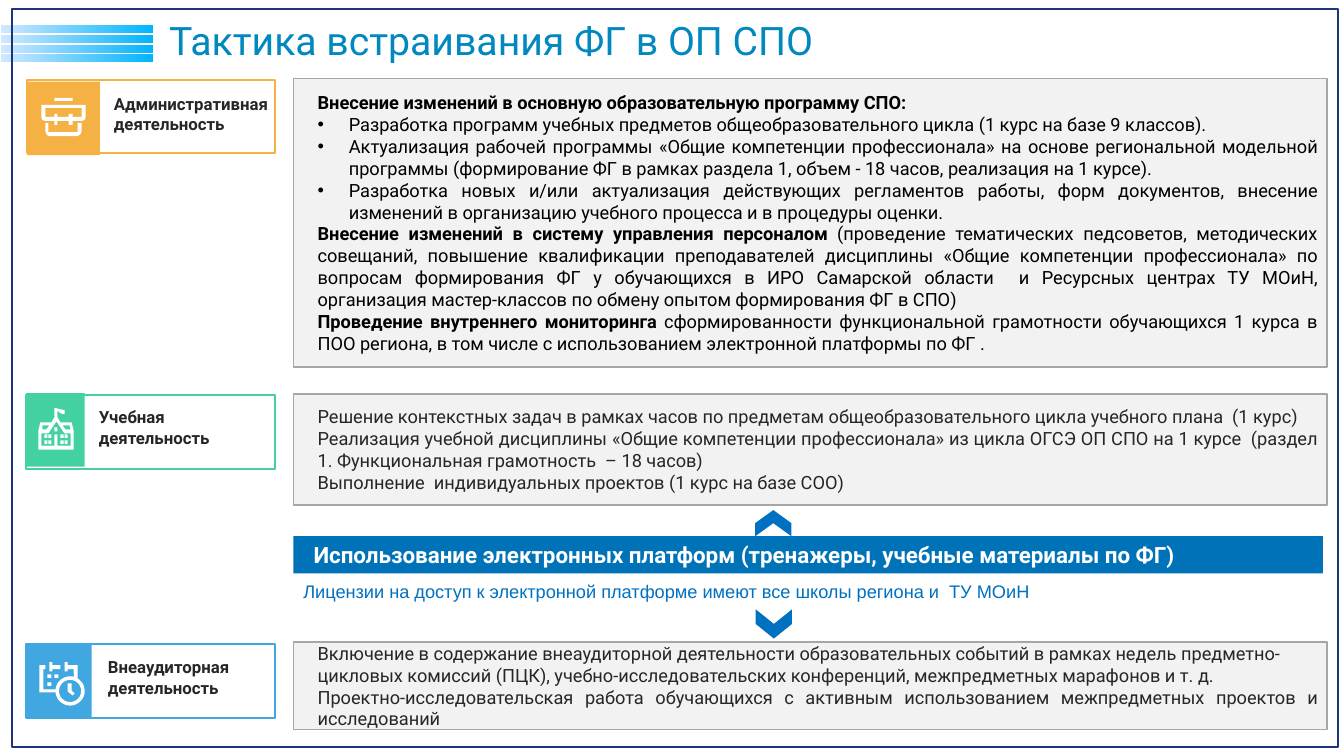
from dataclasses import dataclass
from math import cos, radians, sin

from lxml.etree import SubElement
from pptx import Presentation
from pptx.dml.color import RGBColor as Rgb
from pptx.enum.shapes import MSO_SHAPE as Kind
from pptx.enum.text import MSO_ANCHOR as Anchor, PP_ALIGN as Align
from pptx.oxml.ns import qn
from pptx.util import Inches, Pt


@dataclass(frozen=True)
class Theme:
    font: str = "Roboto"
    plain: str = "Arial"
    white: str = "FFFFFF"
    black: str = "000000"
    dark: str = "262626"
    pale: str = "F2F2F2"
    edge: str = "A6A6A6"
    navy: str = "1E357C"
    head: str = "0088BF"
    bar: str = "0073B8"
    arrow: str = "0070C0"
    fade: tuple = ("D1E8FF", "00B5FF")
    gold: str = "F5B144"
    green: str = "43D1A1"
    sky: str = "40A7E1"
    title: int = 28
    strong: int = 16
    body: int = 13
    label: int = 12


T = Theme()
WIDE, HIGH = Inches(13.33), Inches(7.5)
COL, ROW = WIDE / 133.3, HIGH / 75
LEFT, SPAN = 29.1, 102.5
INSET = (2.4, 0.5, 1, 0.5)
SNUG = (0.8, 0.8, 0.8, 0.8)
BASE = (1, 0.5, 1, 0.5)


def place(x, y, w, h):
    return round(x * COL), round(y * ROW), round(w * COL), round(h * ROW)


def box(slide, spot, fill=None, line=None, width=1, kind=Kind.RECTANGLE):
    shape = slide.shapes.add_shape(kind, *place(*spot))
    shape.shadow.inherit = False
    if fill:
        shape.fill.solid()
        shape.fill.fore_color.rgb = Rgb.from_string(fill)
    else:
        shape.fill.background()
    if line:
        shape.line.color.rgb = Rgb.from_string(line)
        shape.line.width = Pt(width)
    else:
        shape.line.fill.background()
    return shape


def style(run, size, color, bold=False, face=T.font):
    run.font.size = Pt(size)
    run.font.name = face
    run.font.bold = bold
    run.font.color.rgb = Rgb.from_string(color)


def frame(shape, inset, anchor=Anchor.TOP):
    text = shape.text_frame
    text.word_wrap = True
    text.vertical_anchor = anchor
    text.margin_left, text.margin_top, text.margin_right, text.margin_bottom = (
        round(n * COL) for n in inset)
    return text


def write(shape, words, size, color, bold=False, face=T.font, inset=BASE):
    text = frame(shape, inset)
    text.text = words
    for para in text.paragraphs:
        para.alignment = Align.LEFT
        for run in para.runs:
            style(run, size, color, bold, face)
    return text


def note(slide, spot, words, size, color, **look):
    return write(slide.shapes.add_textbox(*place(*spot)), words, size, color, **look)


def bullet(para):
    props = para._p.get_or_add_pPr()
    gap = round(3.1 * COL)
    props.set("marL", str(gap))
    props.set("indent", str(-gap))
    SubElement(props, qn("a:buFont")).set("typeface", T.plain)
    SubElement(props, qn("a:buChar")).set("char", "•")


def panel(slide, y, h, color, paras):
    text = frame(box(slide, (LEFT, y, SPAN, h), T.pale, T.edge), INSET, Anchor.MIDDLE)
    for i, (lead, rest, mark, align) in enumerate(paras):
        para = text.add_paragraph() if i else text.paragraphs[0]
        para.alignment = align
        if mark:
            bullet(para)
        for words, bold in ((lead, True), (rest, False)):
            if words:
                run = para.add_run()
                run.text = words
                style(run, T.body, color, bold)


def item(rest="", lead="", mark=False, align=Align.JUSTIFY):
    return lead, rest, mark, align


def rect(x, y, w, h):
    return [(x, y), (x + w, y), (x + w, y + h), (x, y + h)]


def arc(r, start, end, steps=24):
    turns = (radians(start + (end - start) * i / steps) for i in range(steps + 1))
    return [(30.5 + r * cos(a), 28.5 + r * sin(a)) for a in turns]


def case():
    return [
        rect(13, 0, 18, 3),
        [(0, 7), (0, 19), (1, 22), (4, 23), (13, 23), (13, 27), (16, 27), (16, 23), (27, 23),
         (27, 27), (31, 27), (31, 23), (40, 23), (43, 22), (44, 19), (44, 7)],
        [(31, 19), (31, 16), (27, 16), (27, 19), (16, 19), (16, 16), (13, 16), (13, 19),
         (4, 19), (4, 10), (40, 10), (40, 19)],
        [(36, 34), (7, 34), (7, 25), (4, 25), (4, 33), (5, 36), (7, 38), (36, 38), (39, 36),
         (40, 33), (40, 25), (36, 25)],
    ]


def school():
    return [rect(x, y, 3, 3.5) for x in (6, 10, 22, 26) for y in (26, 32)] + [
        rect(16, 19, 3, 4),
        [(32, 37), (19, 37), (19, 26), (16, 26), (16, 37), (3, 37), (3, 25), (10, 25),
         (18, 13), (26, 25), (32, 25)],
        [(4, 17), (11, 17), (8, 21), (4, 21)],
        [(31, 17), (32, 21), (27, 21), (24, 17)],
        [(33, 14), (22, 14), (19, 9), (19, 3), (20, 3), (22, 5), (26, 6), (26, 2), (22, 1),
         (18, 0), (16, 0), (16, 9), (13, 14), (2, 14), (0, 22), (0, 41), (35, 41), (35, 22)],
    ]


def dates():
    return [rect(x, y, 4, 3.5) for x, y in ((15, 12), (8, 12), (8, 20))] + [
        [(13, 7), (21, 7), (21, 3), (13, 3), (13, 0), (10, 0), (10, 9), (13, 9)],
        [(32, 21), (28, 21), (28, 29), (33, 33), (35, 31), (32, 28)],
        arc(11, 0, 360),
        [(38, 3), (28, 3), (28, 0), (25, 0), (25, 9), (28, 9), (28, 7), (34, 7)]
        + arc(14.5, -75, -174)
        + [(4, 27), (4, 7), (6, 7), (6, 3), (0, 3), (0, 30)]
        + arc(14.5, 174, -59),
    ]


def icon(slide, x, y, loops):
    dots = [[(round((x + a / 10) * COL), round((y + b / 10) * ROW)) for a, b in loop]
            for loop in loops]
    pen = slide.shapes.build_freeform(*dots[0][0])
    for i, loop in enumerate(dots):
        if i:
            pen.move_to(*loop[0])
        pen.add_line_segments(loop[1:], close=True)
    shape = pen.convert_to_shape()
    shape.shadow.inherit = False
    shape.fill.solid()
    shape.fill.fore_color.rgb = Rgb.from_string(T.white)
    shape.line.fill.background()


def card(slide, color, rim, chip, label, words, spot, loops):
    box(slide, rim, T.white, color, 1.5)
    box(slide, chip, color)
    note(slide, label, words, T.label, T.dark, bold=True, inset=SNUG)
    icon(slide, *spot, loops)


def stripe(slide, y):
    fill = box(slide, (0.1, y, 15.1, 0.8), T.white).fill
    fill.gradient()
    fill.gradient_angle = 0
    for stop, color, spot in zip(fill.gradient_stops, T.fade, (0, 1)):
        stop.color.rgb = Rgb.from_string(color)
        stop.position = spot


def main():
    deck = Presentation()
    deck.slide_width, deck.slide_height = WIDE, HIGH
    slide = deck.slides.add_slide(deck.slide_layouts[6])
    for i in range(4):
        stripe(slide, 2.5 + 0.96 * i)
    box(slide, (1.2, 0.9, 131.5, 73.2), line=T.navy)
    head = note(slide, (15.8, 1.7, 117, 5.4), "Тактика встраивания ФГ в ОП СПО", T.title, T.head)
    head.paragraphs[0].line_spacing = 0.9

    panel(slide, 7.8, 28.6, T.black, [
        item(lead="Внесение изменений в основную образовательную программу СПО:"),
        item("Разработка программ учебных предметов общеобразовательного цикла (1 курс на базе 9 классов).", mark=True),
        item("Актуализация рабочей программы «Общие компетенции профессионала» на основе региональной модельной программы (формирование ФГ в рамках раздела 1, объем - 18 часов, реализация на 1 курсе).", mark=True),
        item("Разработка новых и/или актуализация действующих регламентов работы, форм документов, внесение изменений в организацию учебного процесса и в процедуры оценки.", mark=True),
        item("(проведение тематических педсоветов, методических совещаний, повышение квалификации преподавателей дисциплины «Общие компетенции профессионала» по вопросам формирования ФГ у обучающихся в ИРО Самарской области  и Ресурсных центрах ТУ МОиН, организация мастер-классов по обмену опытом формирования ФГ в СПО)",
             "Внесение изменений в систему управления персоналом "),
        item("сформированности функциональной грамотности обучающихся 1 курса в ПОО региона, в том числе с использованием электронной платформы по ФГ .",
             "Проведение внутреннего мониторинга "),
    ])
    panel(slide, 39.1, 11, T.dark, [
        item("Решение контекстных задач в рамках часов по предметам общеобразовательного цикла учебного плана  (1 курс)"),
        item("Реализация учебной дисциплины «Общие компетенции профессионала» из цикла ОГСЭ ОП СПО на 1 курсе  (раздел 1. Функциональная грамотность  – 18 часов)"),
        item("Выполнение  индивидуальных проектов (1 курс на базе СОО)"),
    ])
    panel(slide, 63.7, 8.7, T.dark, [
        item("Включение в содержание внеаудиторной деятельности образовательных событий в рамках недель предметно-цикловых комиссий (ПЦК), учебно-исследовательских конференций, межпредметных марафонов и т. д.", align=Align.LEFT),
        item("Проектно-исследовательская работа обучающихся с активным использованием межпредметных проектов и исследований"),
    ])

    card(slide, T.gold, (2.7, 7.9, 24.6, 7.3), (2.7, 8.1, 7.2, 7.3), (10.5, 8.5, 19, 5.6),
         "Административная деятельность", (4.1, 9.7), case())
    card(slide, T.green, (2.6, 39.2, 24.7, 7.3), (2.6, 39, 5.8, 7.3), (9, 39.6, 18.4, 5.6),
         "Учебная деятельность", (3.8, 40.5), school())
    card(slide, T.sky, (2.6, 63.9, 24.7, 7.3), (2.7, 64, 6.4, 7.2), (9.9, 64.4, 15.8, 5.6),
         "Внеаудиторная\nдеятельность", (3.9, 65.7), dates())

    write(box(slide, (LEFT, 53.2, 102.1, 3.7), T.bar),
          "Использование электронных платформ (тренажеры, учебные материалы по ФГ)",
          T.strong, T.white, bold=True, inset=(2, 0.5, 1, 0.5))
    for spot, turn in (((75.3, 60.1, 2.9, 3.6), 90), ((75.4, 50.1, 2.6, 3.6), 270)):
        box(slide, spot, T.arrow, kind=Kind.CHEVRON).rotation = turn
    note(slide, (LEFT, 57.1, 103, 3.2),
         "Лицензии на доступ к электронной платформе имеют все школы региона и  ТУ МОиН",
         T.body, T.arrow, face=T.plain)
    deck.save("out.pptx")


if __name__ == "__main__":
    main()
